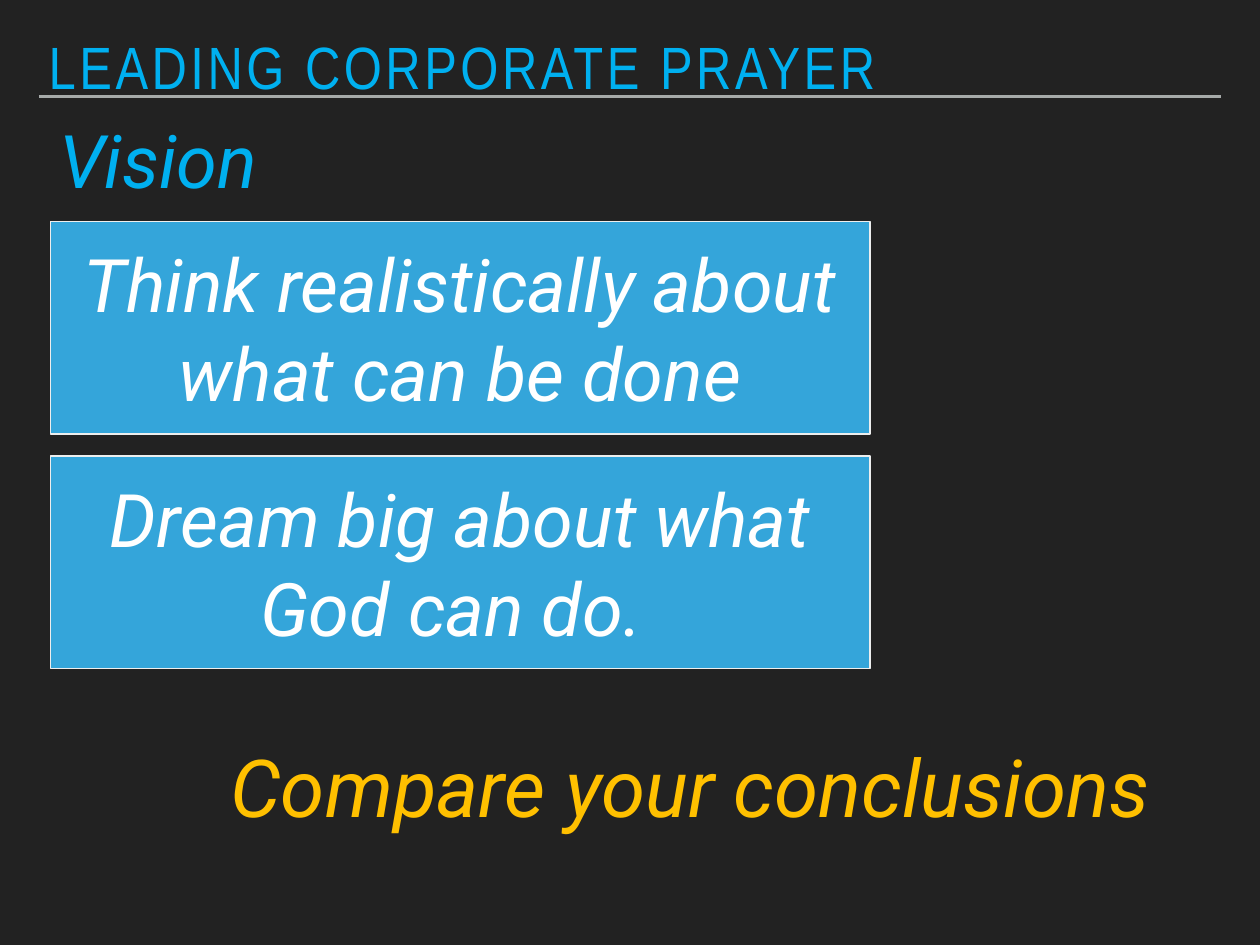
import pptx
import pptx.dml.color
import pptx.enum.shapes
import pptx.enum.text
import pptx.oxml.ns
import pptx.util
from lxml import etree
from pptx.util import Inches


def color(value):
    return pptx.dml.color.RGBColor.from_string(value)


def write(shape, text, size, font_name, font_color, align="LEFT", anchor="MIDDLE", wrap=True, italic=True):
    frame = shape.text_frame
    frame.text = text
    frame.word_wrap = wrap
    frame.auto_size = pptx.enum.text.MSO_AUTO_SIZE.NONE
    frame.vertical_anchor = pptx.enum.text.MSO_ANCHOR[anchor]
    frame.margin_left = frame.margin_right = Inches(0.06)
    frame.margin_top = frame.margin_bottom = Inches(0.06)
    paragraph = frame.paragraphs[0]
    paragraph.alignment = pptx.enum.text.PP_ALIGN[align]
    paragraph.space_before = pptx.util.Pt(0)
    run = paragraph.runs[0]
    run.font.name = font_name
    run.font.size = pptx.util.Pt(size)
    run.font.italic = italic
    run.font.color.rgb = color(font_color)
    return paragraph


presentation = pptx.Presentation()
presentation.slide_width = Inches(14.22)
presentation.slide_height = Inches(10.67)
slide = presentation.slides.add_slide(presentation.slide_layouts[5])
slide.background.fill.solid()
slide.background.fill.fore_color.rgb = color("222222")

rule = slide.shapes.add_connector(
    pptx.enum.shapes.MSO_CONNECTOR.STRAIGHT, Inches(0.44), Inches(1.09), Inches(13.78), Inches(1.09)
)
rule.line.color.rgb = color("A6AAA9")
rule.line.width = pptx.util.Pt(2)
etree.SubElement(rule._element.spPr, pptx.oxml.ns.qn("a:effectLst"))

title = slide.shapes.title
title.left, title.top = Inches(0.49), Inches(0.26)
title.width, title.height = Inches(12.22), Inches(0.92)
heading = write(title, "LEADING CORPORATE PRAYER", 48.5, "Arial Narrow", "00B0F0", anchor="BOTTOM", italic=False)
heading.line_spacing = 0.7
heading.runs[0].font._element.set("spc", "290")

vision = slide.shapes.add_textbox(Inches(0.61), Inches(1.17), Inches(2.6), Inches(1.25))
write(vision, "Vision", 60, "Roboto", "00B0F0", wrap=False)

statements = ["Think realistically about what can be done", "Dream big about what God can do. "]
for index, statement in enumerate(statements):
    box = slide.shapes.add_shape(
        pptx.enum.shapes.MSO_SHAPE.RECTANGLE,
        Inches(0.57), Inches(2.5 + 2.65 * index), Inches(9.25), Inches(2.4),
    )
    box.shadow.inherit = False
    box.fill.solid()
    box.fill.fore_color.rgb = color("34A5DA")
    box.line.color.rgb = color("EDEEEE")
    box.line.width = pptx.util.Pt(1)
    write(box, statement, 60, "Roboto", "FFFFFF", align="CENTER")

conclusion = slide.shapes.add_textbox(Inches(2.54), Inches(8.29), Inches(11.01), Inches(1.35))
closing = write(conclusion, "Compare your conclusions", 65, "Roboto", "FFC000", wrap=False)
closing.line_spacing = 0.8

presentation.save("out.pptx")
